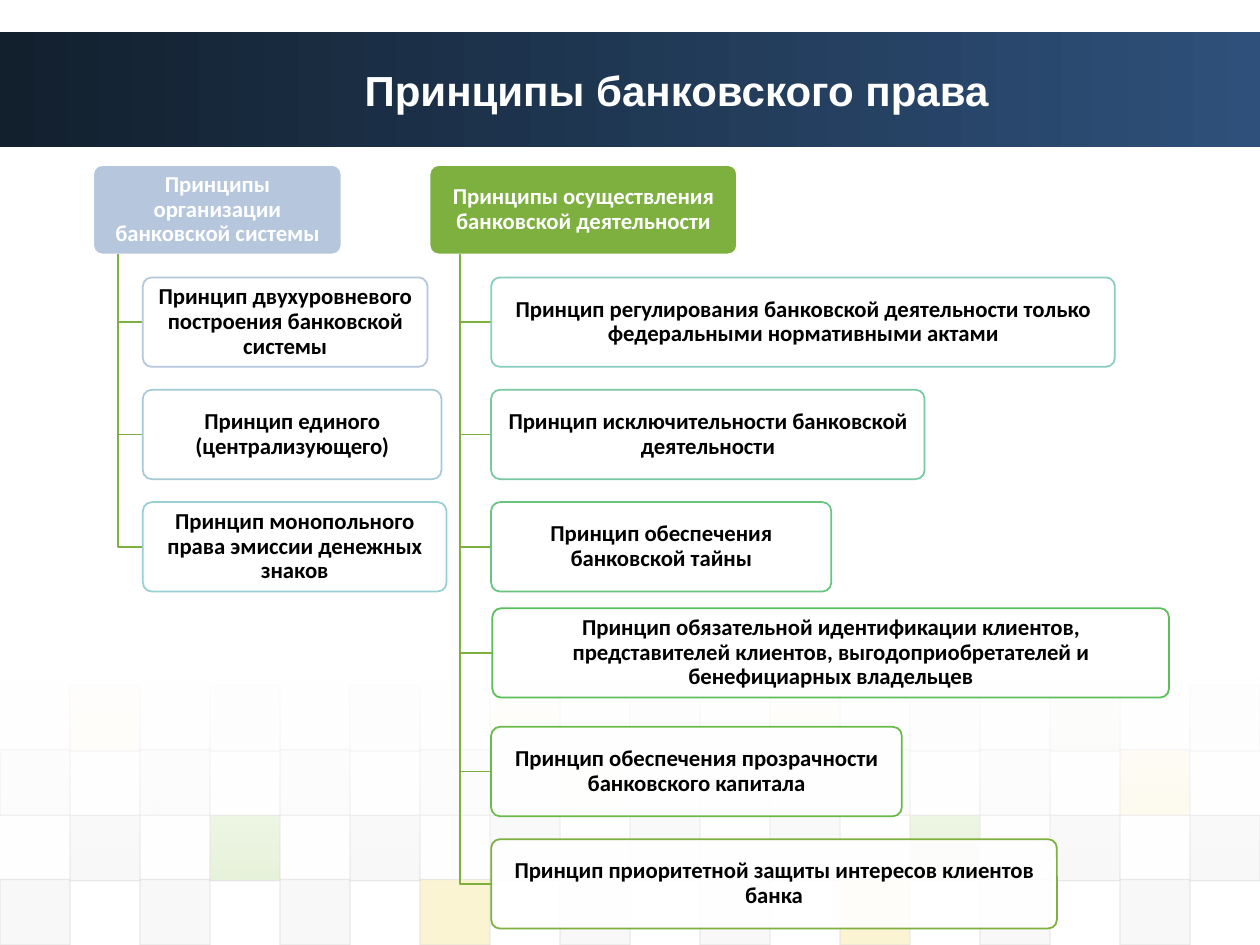
from lxml import etree
from pptx import Presentation
from pptx.dml.color import RGBColor
from pptx.enum.shapes import MSO_SHAPE
from pptx.enum.text import MSO_ANCHOR, PP_ALIGN
from pptx.oxml.ns import qn
from pptx.util import Inches, Pt

COLORS = {
    "white": "FFFFFF", "black": "000000", "banner_dark": "12202E", "banner_light": "2E507A",
    "branch": "7DB03F", "D": "DDDDDD", "E": "EAEAEA", "G": "8AC246", "Y": "EFC821",
}
TITLE = "Принципы банковского права"
GROUPS = [
    {"heading": "Принципы организации банковской системы", "left": 0.74, "width": 1.97,
     "color": "B5C6DD", "principles": [
         ("Принцип двухуровневого построения банковской системы", 2.26, "B5C6DD"),
         ("Принцип единого (централизующего)", 2.37, "A6C8D7"),
         ("Принцип монопольного права эмиссии денежных знаков", 2.41, "97CFD2")]},
    {"heading": "Принципы осуществления банковской деятельности", "left": 3.41, "width": 2.44,
     "color": "7DB03F", "principles": [
         ("Принцип регулирования банковской деятельности только федеральными "
          "нормативными актами", 4.95, "88CDBE"),
         ("Принцип исключительности банковской деятельности", 3.44, "78C8A1"),
         ("Принцип обеспечения банковской тайны", 2.7, "68C47F"),
         ("Принцип обязательной идентификации клиентов, представителей клиентов, "
          "выгодоприобретателей и бенефициарных владельцев", 5.37, "5ABF58"),
         ("Принцип обеспечения прозрачности банковского капитала", 3.26, "69BB48"),
         ("Принцип приоритетной защиты интересов клиентов банка", 4.49, "7DB03F")]},
]
NUDGES = {"5ABF58": (0.01, -0.05)}
TILE_ROWS = [(5.44, 5, 1, "YEEYDYEGE"), (5.95, 10, 0, "DDDDGDDDY"),
             (6.47, 20, 1, "DGDDDDGDD"), (6.98, 20, 0, "DDDYDDYDD")]
TILE_WIDTH, TILE_HEIGHT = 10 / 18, 0.52
HEADING_TOP, BOX_HEIGHT, ROW_STEP = 1.31, 0.71, 5.35 / 6


def rgb(value):
    return RGBColor.from_string(value)


def set_alpha(color_parent, percent):
    for color in color_parent.iter(qn("a:srgbClr")):
        etree.SubElement(color, qn("a:alpha")).set("val", str(percent * 1000))


def add_block(slide, kind, left, top, width, height):
    block = slide.shapes.add_shape(kind, Inches(left), Inches(top), Inches(width), Inches(height))
    block.shadow.inherit = False
    block.line.fill.background()
    return block


def fill_solid(block, color, opacity=100):
    block.fill.solid()
    block.fill.fore_color.rgb = rgb(color)
    if opacity < 100:
        set_alpha(block.fill._xPr.find(qn("a:solidFill")), opacity)


def fill_gradient(block, colors, angle, opacities=(100, 100)):
    block.fill.gradient()
    block.fill.gradient_angle = angle
    stops = block.fill._xPr.findall(".//" + qn("a:gs"))
    for stop, element, position, color, opacity in zip(
            block.fill.gradient_stops, stops, (0, 1), colors, opacities):
        stop.position = position
        stop.color.rgb = rgb(color)
        if opacity < 100:
            set_alpha(element, opacity)


def outline(block, color, width=1):
    block.line.color.rgb = rgb(color)
    block.line.width = Pt(width)


def write(block, text, font, size, color, insets, spacing=None):
    frame = block.text_frame
    frame.word_wrap = True
    frame.vertical_anchor = MSO_ANCHOR.MIDDLE
    frame.margin_left = frame.margin_right = Inches(insets[0])
    frame.margin_top = frame.margin_bottom = Inches(insets[1])
    paragraph = frame.paragraphs[0]
    paragraph.alignment = PP_ALIGN.CENTER
    if spacing:
        paragraph.line_spacing = spacing
    run = paragraph.add_run()
    run.text = text
    run.font.name, run.font.size, run.font.bold = font, Pt(size), True
    run.font.color.rgb = rgb(color)


def add_box(slide, text, left, top, width, fill, opacity, line, color):
    box = add_block(slide, MSO_SHAPE.ROUNDED_RECTANGLE, left, top, width, BOX_HEIGHT)
    box.adjustments[0] = 0.1
    fill_solid(box, fill, opacity)
    outline(box, line)
    write(box, text, "Calibri", 13, color, (0.05, 0.04), 0.9)


def add_branch(slide, trunk, top, bottom, right):
    builder = slide.shapes.build_freeform(Inches(trunk), Inches(top))
    builder.add_line_segments(
        [(Inches(trunk), Inches(bottom)), (Inches(right), Inches(bottom))], close=False)
    branch = builder.convert_to_shape()
    branch.shadow.inherit = False
    branch.fill.background()
    outline(branch, COLORS["branch"])


def add_backdrop(slide):
    banner = add_block(slide, MSO_SHAPE.RECTANGLE, 0, 0.25, 10, 0.92)
    fill_gradient(banner, (COLORS["banner_dark"], COLORS["banner_light"]), 0)
    for top, opacity, first, tints in TILE_ROWS:
        for index, tint in enumerate(tints):
            left = (first + 2 * index) * TILE_WIDTH
            tile = add_block(slide, MSO_SHAPE.RECTANGLE, left, top, TILE_WIDTH, TILE_HEIGHT)
            fill_solid(tile, COLORS[tint], opacity)
            outline(tile, COLORS["D"], 0.75)
            set_alpha(tile.line._ln, 60)
    fade = add_block(slide, MSO_SHAPE.RECTANGLE, 0, 5.37, 10, 1.62)
    fill_gradient(fade, (COLORS["white"], COLORS["white"]), 270, (90, 0))


def add_group(slide, group):
    left, width = group["left"], group["width"]
    add_box(slide, group["heading"], left, HEADING_TOP, width,
            group["color"], 100, COLORS["white"], COLORS["white"])
    for row, (text, box_width, line) in enumerate(group["principles"], 1):
        shift_x, shift_y = NUDGES.get(line, (0, 0))
        box_left = left + 0.2 * width + shift_x
        top = HEADING_TOP + row * ROW_STEP + shift_y
        add_branch(slide, left + 0.1 * width, HEADING_TOP + BOX_HEIGHT,
                   top + BOX_HEIGHT / 2, box_left)
        add_box(slide, text, box_left, top, box_width,
                COLORS["white"], 90, line, COLORS["black"])


def main():
    deck = Presentation()
    deck.slide_width, deck.slide_height = Inches(10), Inches(7.5)
    slide = deck.slides.add_slide(deck.slide_layouts[6])
    add_backdrop(slide)
    title = slide.shapes.add_textbox(Inches(1.33), Inches(0.25), Inches(8.08), Inches(0.92))
    write(title, TITLE, "Arial", 24, COLORS["white"], (0.1, 0.05))
    for group in GROUPS:
        add_group(slide, group)
    deck.save("out.pptx")


if __name__ == "__main__":
    main()
